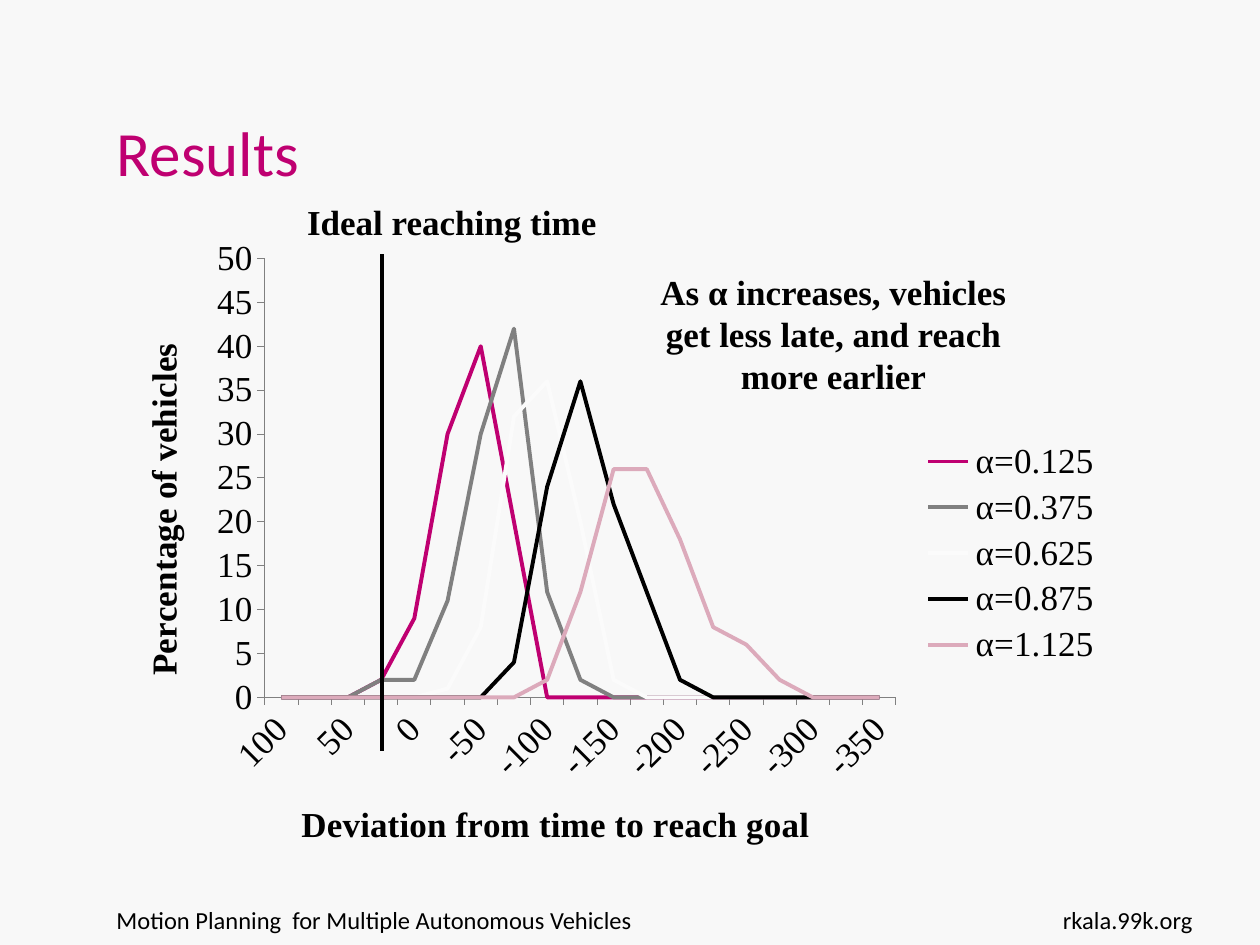
from lxml.etree import SubElement
from pptx import Presentation
from pptx.chart.data import CategoryChartData
from pptx.dml.color import RGBColor
from pptx.enum.chart import XL_CHART_TYPE, XL_LEGEND_POSITION, XL_TICK_MARK
from pptx.enum.shapes import MSO_CONNECTOR
from pptx.enum.text import MSO_ANCHOR, PP_ALIGN
from pptx.oxml.ns import qn
from pptx.util import Pt

MAGENTA = RGBColor(0xBF, 0x00, 0x71)
GREY = RGBColor(0x80, 0x80, 0x80)
PALE = RGBColor(0xFB, 0xFB, 0xFB)
BLACK = RGBColor(0x00, 0x00, 0x00)
PINK = RGBColor(0xDC, 0xAA, 0xBB)
BACKGROUND = RGBColor(0xF8, 0xF8, 0xF8)
SANS, SERIF = "Calibri", "Times New Roman"

TITLE = "Results"
DEVIATION_TITLE = "Deviation from time to reach goal"
PERCENTAGE_TITLE = "Percentage of vehicles"
DEVIATIONS = [str(deviation) for deviation in range(100, -351, -25)]
CURVES = [
    ("α=0.125", MAGENTA, 3, [2, 9, 30, 40, 20]),
    ("α=0.375", GREY, 3, [2, 2, 11, 30, 42, 12, 2]),
    ("α=0.625", PALE, 5, [1, 8, 32, 36, 20, 2]),
    ("α=0.875", BLACK, 7, [4, 24, 36, 22, 12, 2]),
    ("α=1.125", PINK, 8, [2, 12, 26, 26, 18, 8, 6, 2]),
]
LABELS = [
    ("Motion Planning  for Multiple Autonomous Vehicles",
     (59.5, 513.4, 499, 37.4), SANS, 14, False, PP_ALIGN.LEFT),
    ("rkala.99k.org", (580.6, 513.4, 108, 37.4), SANS, 14, False, PP_ALIGN.RIGHT),
    ("Ideal reaching time", (167, 111.2, 182.4, 29.5), SERIF, 20, True, PP_ALIGN.CENTER),
    ("As α increases, vehicles get less late, and reach more earlier",
     (360, 151.2, 232.6, 90.7), SERIF, 20, True, PP_ALIGN.CENTER),
]


def style(font, name, size, color, bold=False):
    font.name, font.size, font.bold = name, Pt(size), bold
    font.color.rgb = color


def place(element, index, inner=False, **fractions):
    for old in element.findall(qn("c:layout")):
        element.remove(old)
    layout = SubElement(element, qn("c:layout"))
    element.insert(index, layout)
    manual = SubElement(layout, qn("c:manualLayout"))
    if inner:
        SubElement(manual, qn("c:layoutTarget")).set("val", "inner")
    for side in "xy":
        SubElement(manual, qn(f"c:{side}Mode")).set("val", "edge")
    for key, value in fractions.items():
        SubElement(manual, qn(f"c:{key}")).set("val", str(value))


def add_title(slide):
    title = slide.shapes.title
    title.left, title.top, title.width, title.height = Pt(59.5), Pt(21.6), Pt(487.4), Pt(90)
    frame = title.text_frame
    frame.text = TITLE
    frame.vertical_anchor = MSO_ANCHOR.BOTTOM
    frame.paragraphs[0].alignment = PP_ALIGN.LEFT
    style(frame.paragraphs[0].runs[0].font, SANS, 36, MAGENTA)


def add_curves(slide):
    data = CategoryChartData()
    data.categories = DEVIATIONS
    for name, _, start, values in CURVES:
        tail = len(DEVIATIONS) - start - len(values)
        data.add_series(name, [0] * start + values + [0] * tail)
    chart = slide.shapes.add_chart(
        XL_CHART_TYPE.LINE, Pt(65.5), Pt(129), Pt(572.4), Pt(374.4), data).chart
    style(chart.font, SERIF, 20, BLACK)
    chart.has_title = False
    chart.plots[0].vary_by_categories = False
    for series, (_, color, _, _) in zip(chart.plots[0].series, CURVES):
        series.smooth = False
        series.format.line.color.rgb = color
        series.format.line.width = Pt(2.25)

    deviation, percentage = chart.category_axis, chart.value_axis
    percentage.minimum_scale, percentage.maximum_scale = 0, 50
    percentage.major_unit = 5
    for axis, text, x, y in [(deviation, DEVIATION_TITLE, 0.18, 0.87),
                             (percentage, PERCENTAGE_TITLE, 0.02, 0.17)]:
        axis.has_major_gridlines = False
        axis.major_tick_mark = XL_TICK_MARK.OUTSIDE
        axis.format.line.color.rgb = GREY
        axis.format.line.width = Pt(0.5)
        style(axis.tick_labels.font, SERIF, 20, BLACK)
        axis.axis_title.text_frame.text = text
        style(axis.axis_title.text_frame.paragraphs[0].runs[0].font, SERIF, 20, BLACK, True)
        place(axis.axis_title._element, 1, x=x, y=y)
    deviation._element.find(f"{qn('c:txPr')}/{qn('a:bodyPr')}").set("rot", "-2700000")
    skip = SubElement(deviation._element, qn("c:tickLblSkip"))
    skip.set("val", "2")
    deviation._element.find(qn("c:noMultiLvlLbl")).addprevious(skip)

    chart.has_legend = True
    chart.legend.position = XL_LEGEND_POSITION.RIGHT
    chart.legend.include_in_layout = False
    style(chart.legend.font, SERIF, 20, BLACK)
    place(chart.legend._element, 1, x=0.8, y=0.32, w=0.19, h=0.36)
    place(chart._chartSpace.chart.plotArea, 0, inner=True, x=0.15, y=0.05, w=0.63, h=0.67)


def add_ideal_time(slide):
    ideal = slide.shapes.add_connector(
        MSO_CONNECTOR.STRAIGHT, Pt(218.2), Pt(429.1), Pt(218.2), Pt(145.4))
    ideal.line.color.rgb = BLACK
    ideal.line.width = Pt(2)
    SubElement(ideal._element.spPr, qn("a:effectLst"))


def add_label(slide, text, box, font, size, bold, alignment):
    frame = slide.shapes.add_textbox(*map(Pt, box)).text_frame
    frame.word_wrap = True
    frame.text = text
    paragraph = frame.paragraphs[0]
    paragraph.alignment = alignment
    style(paragraph.runs[0].font, font, size, BLACK, bold)


def main():
    deck = Presentation()
    deck.slide_width, deck.slide_height = Pt(720), Pt(540)
    slide = deck.slides.add_slide(deck.slide_layouts[5])
    slide.background.fill.solid()
    slide.background.fill.fore_color.rgb = BACKGROUND
    add_title(slide)
    add_curves(slide)
    add_ideal_time(slide)
    for label in LABELS:
        add_label(slide, *label)
    deck.save("out.pptx")


if __name__ == "__main__":
    main()
